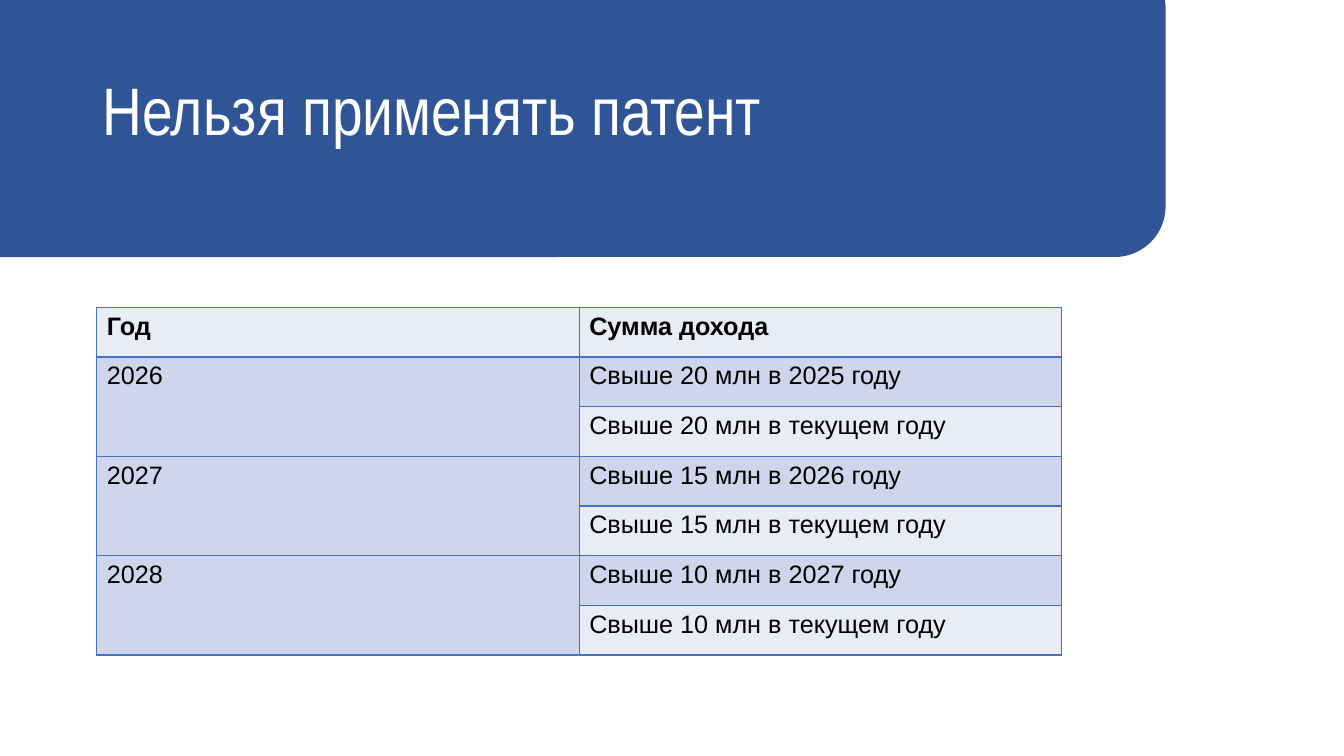
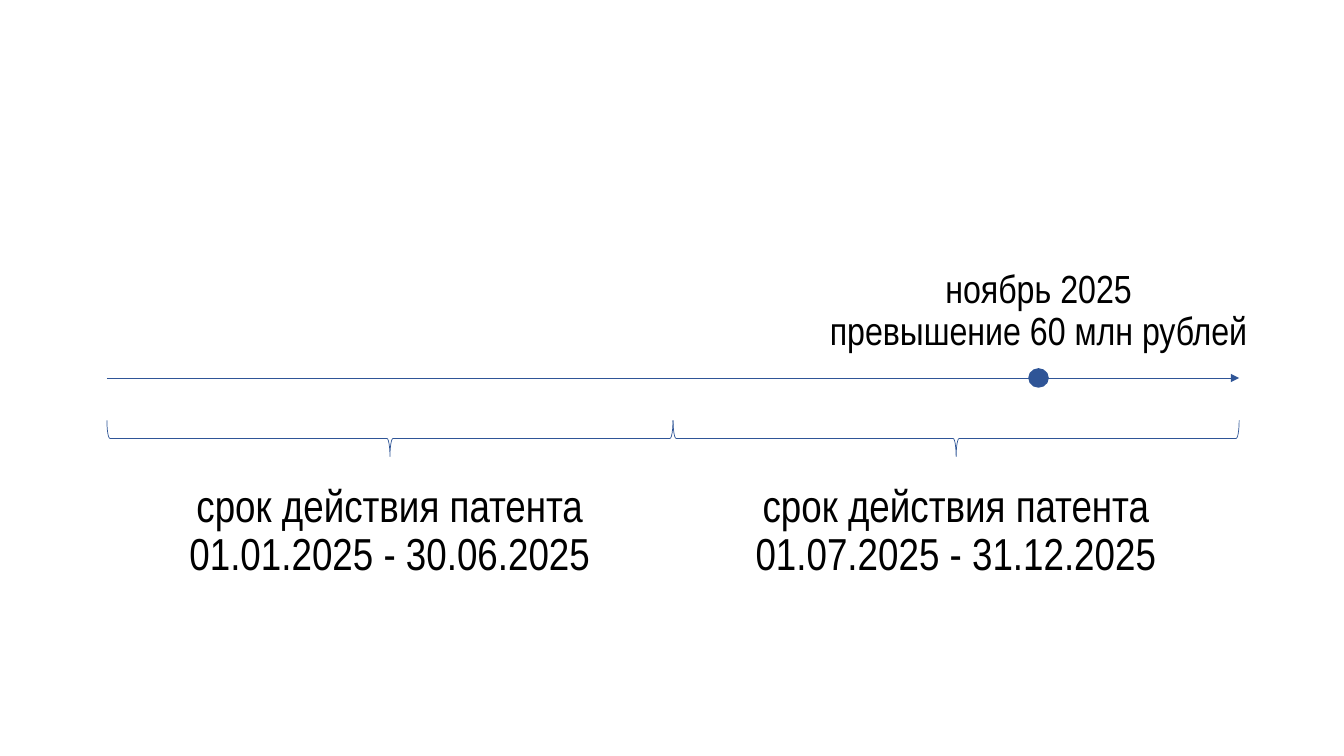
from lxml import etree
from pptx import Presentation
from pptx.dml.color import RGBColor
from pptx.enum import shapes, text
from pptx.oxml.ns import qn
from pptx.util import Inches, Pt

COLORS = {
    "navy": "2F5597",
    "border": "4472C4",
    "light": "E9EBF5",
    "dark": "CFD5EA",
    "white": "FFFFFF",
    "black": "000000",
}
NARROW = "Arial Narrow"
INCOME_LIMITS = [(2026, 20), (2027, 15), (2028, 10)]
PERIODS = ["01.01.2025 - 30.06.2025", "01.07.2025 - 31.12.2025"]
AXIS_LEFT, AXIS_RIGHT, AXIS_Y = 1.06, 12.29, 3.75
LABEL_W, LABEL_H = 5.53, 1.32


def rgb(name):
    """Return the named colour."""
    return RGBColor.from_string(COLORS[name])


def style_paragraph(p, size, color="black", name=NARROW, bold=False):
    """Set the font of a paragraph."""
    p.font.size = Pt(size)
    p.font.name = name
    p.font.bold = bold
    p.font.color.rgb = rgb(color)


def add_figure(slide, kind, left, top, width, height, line_width, filled=True):
    """Add a navy preset shape."""
    sp = slide.shapes.add_shape(
        kind, Inches(left), Inches(top), Inches(width), Inches(height))
    sp.shadow.inherit = False
    if filled:
        sp.fill.solid()
        sp.fill.fore_color.rgb = rgb("navy")
    else:
        sp.fill.background()
    sp.line.color.rgb = rgb("navy")
    sp.line.width = Pt(line_width)
    return sp


def add_title(slide, caption):
    """Format the title and lay the navy band behind it."""
    band = add_figure(slide, shapes.MSO_SHAPE.ROUNDED_RECTANGLE,
                      -0.74, -0.42, 12.29, 2.96, 1.5)
    title = slide.shapes.title
    title._element.addprevious(band._element)
    title.left, title.top = Inches(0.92), Inches(0.4)
    title.width, title.height = Inches(11.5), Inches(1.45)
    tf = title.text_frame
    tf.text = caption
    tf.vertical_anchor = text.MSO_ANCHOR.MIDDLE
    p = tf.paragraphs[0]
    p.alignment = text.PP_ALIGN.LEFT
    p.line_spacing = 0.9
    style_paragraph(p, 48, "white")


def add_borders(cell):
    """Draw a thin border on every side of a cell."""
    tcPr = cell._tc.get_or_add_tcPr()
    for i, side in enumerate(("a:lnL", "a:lnR", "a:lnT", "a:lnB")):
        ln = etree.Element(qn(side), w=str(Pt(1)))
        fill = etree.SubElement(ln, qn("a:solidFill"))
        etree.SubElement(fill, qn("a:srgbClr"), val=COLORS["border"])
        tcPr.insert(i, ln)


def fill_cell(cell, value, color, bold):
    """Write and format one table cell."""
    cell.text = value
    style_paragraph(cell.text_frame.paragraphs[0], 18, name="Arial", bold=bold)
    cell.fill.solid()
    cell.fill.fore_color.rgb = rgb(color)
    add_borders(cell)


def add_income_table(slide):
    """Add the table of income limits by year."""
    rows = [("Год", "Сумма дохода")]
    for year, limit in INCOME_LIMITS:
        rows += [(str(year), f"Свыше {limit} млн в {year - 1} году"),
                 ("", f"Свыше {limit} млн в текущем году")]
    table = slide.shapes.add_table(
        len(rows), 2, Inches(0.96), Inches(3.05), Inches(9.57), Inches(3.45)).table
    for r, row in enumerate(rows):
        for c, value in enumerate(row):
            color = "dark" if r % 2 else "light"
            fill_cell(table.cell(r, c), value, color, bold=r == 0)
    for r in range(1, len(rows), 2):
        table.cell(r, 0).merge(table.cell(r + 1, 0))


def add_label(slide, center, top, lines, size):
    """Add centred lines of text around a horizontal position."""
    sp = slide.shapes.add_textbox(Inches(center - LABEL_W / 2), Inches(top),
                                  Inches(LABEL_W), Inches(LABEL_H))
    tf = sp.text_frame
    tf.word_wrap = True
    tf.vertical_anchor = text.MSO_ANCHOR.MIDDLE
    tf.text = "\n".join(lines)
    for p in tf.paragraphs:
        p.alignment = text.PP_ALIGN.CENTER
        p.line_spacing = 0.9
        style_paragraph(p, size)


def add_axis(slide):
    """Add the time axis with an arrowhead."""
    axis = slide.shapes.add_connector(
        shapes.MSO_CONNECTOR.STRAIGHT, Inches(AXIS_LEFT), Inches(AXIS_Y),
        Inches(AXIS_RIGHT), Inches(AXIS_Y))
    axis.line.color.rgb = rgb("navy")
    axis.line.width = Pt(0.5)
    spPr = axis._element.spPr
    etree.SubElement(spPr.find(qn("a:ln")), qn("a:tailEnd"), type="triangle")
    etree.SubElement(spPr, qn("a:effectLst"))


def add_period(slide, center, span, dates):
    """Add a brace under the axis with the patent period below it."""
    depth, middle = 0.36, 4.35
    brace = add_figure(slide, shapes.MSO_SHAPE.RIGHT_BRACE, center - depth / 2,
                       middle - span / 2, depth, span, 0.5, filled=False)
    brace.rotation = 90
    add_label(slide, center, 4.62, ["срок действия патента", dates], 32)


def add_event(slide, center, lines):
    """Add a dot on the axis with its label above."""
    width, height = 0.19, 0.18
    add_figure(slide, shapes.MSO_SHAPE.OVAL, center - width / 2,
               AXIS_Y - height / 2, width, height, 1)
    add_label(slide, center, 2.43, lines, 28)


def build_limits(prs):
    """Build the slide with the income limits."""
    slide = prs.slides.add_slide(prs.slide_layouts[5])
    add_title(slide, "Нельзя применять патент")
    add_income_table(slide)


def build_timeline(prs):
    """Build the slide with the patent timeline."""
    slide = prs.slides.add_slide(prs.slide_layouts[6])
    add_axis(slide)
    span = (AXIS_RIGHT - AXIS_LEFT) / len(PERIODS)
    for i, dates in enumerate(PERIODS):
        add_period(slide, AXIS_LEFT + span * (i + 0.5), span, dates)
    add_event(slide, 10.3, ["ноябрь 2025", "превышение 60 млн рублей"])


def main():
    """Build and save the presentation."""
    prs = Presentation()
    prs.slide_width, prs.slide_height = Inches(13.33), Inches(7.5)
    build_limits(prs)
    build_timeline(prs)
    prs.save("out.pptx")


if __name__ == "__main__":
    main()
